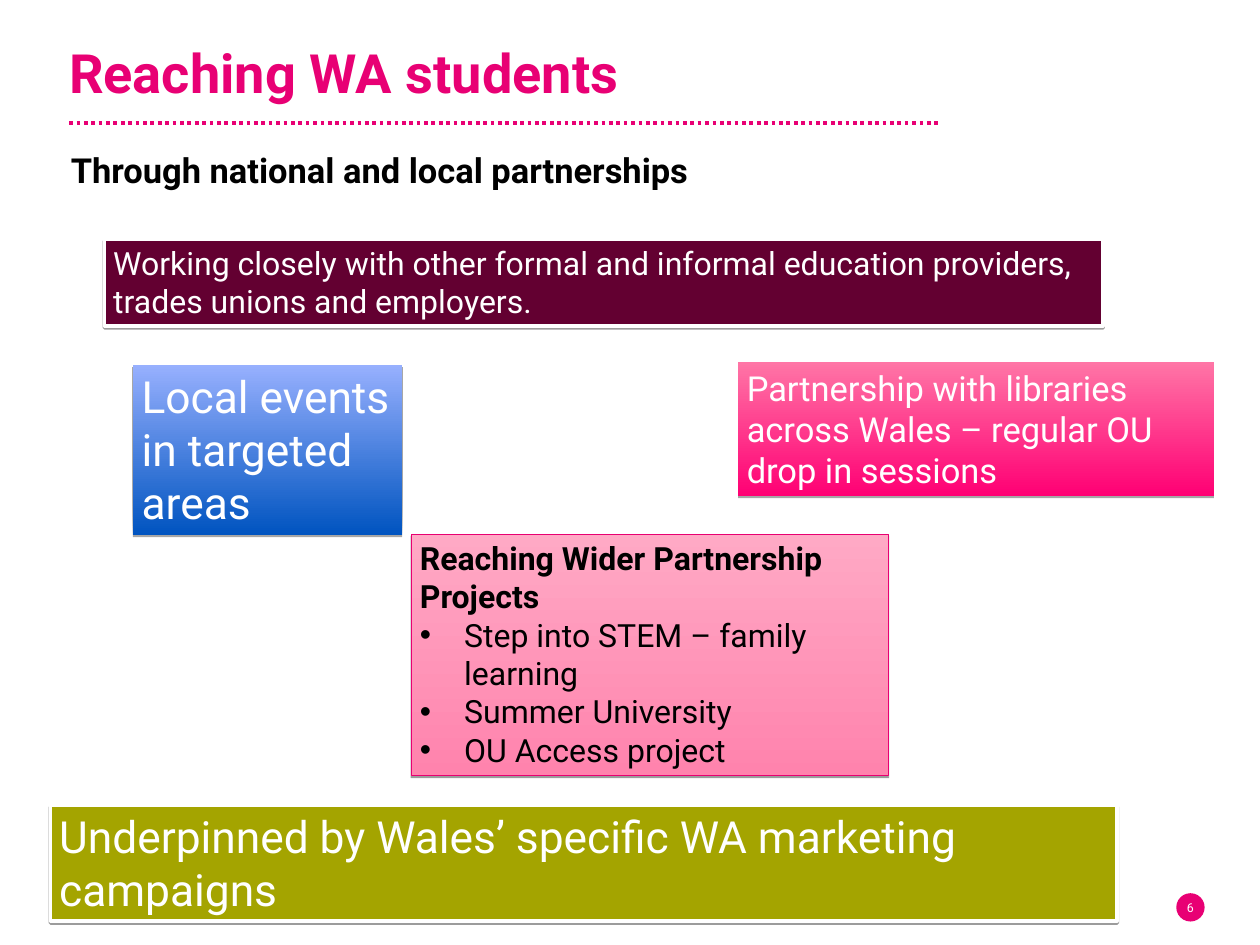
from lxml import etree
from pptx import Presentation
from pptx import util as u
from pptx.dml import color as col
from pptx.enum import dml, shapes, text
from pptx.oxml import ns

HUES = {
    "pink": "E80074", "white": "FFFFFF", "black": "000000",
    "plum": "630031", "olive": "A4A400", "edge": "E80071",
    "navy": "0054C0", "sky": "97B0FE", "hot": "FF0074",
    "rose": "FF75A6", "coral": "FF83AD", "blush": "FFA9C5",
}
FONT = "Roboto"


def hue(name):
    return col.RGBColor.from_string(HUES[name])


def inch(box):
    return [u.Inches(n) for n in box]


def place(item, box):
    item.left, item.top, item.width, item.height = inch(box)


def inset(frame, side, top):
    frame.margin_left = frame.margin_right = u.Inches(side)
    frame.margin_top = frame.margin_bottom = u.Inches(top)


def add(parent, tag, **attrs):
    return etree.SubElement(parent, ns.qn(tag), attrs)


def style(para, size, ink, bold=False, align=text.PP_ALIGN.LEFT):
    para.alignment = align
    for run in para.runs:
        font = run.font
        font.name, font.size, font.bold = FONT, u.Pt(size), bold
        font.color.rgb = hue(ink)


def bullet(para):
    props = para._p.get_or_add_pPr()
    props.set("marL", str(u.Inches(0.5)))
    props.set("indent", str(-u.Inches(0.5)))
    add(props, "a:buFont", typeface="Arial")
    add(props, "a:buChar", char="•")


def shade(shape, alpha, drop):
    shape.shadow.inherit = False
    effects = shape._element.spPr.find(ns.qn("a:effectLst"))
    outer = add(effects, "a:outerShdw", blurRad="0", dist=str(u.Pt(drop)),
                dir="5400000", rotWithShape="0")
    tint = add(outer, "a:srgbClr", val=HUES["black"])
    add(tint, "a:alpha", val=str(alpha * 1000))


def heading(holder, box, words, size, ink):
    place(holder, box)
    frame = holder.text_frame
    frame.text = words
    frame.word_wrap = True
    frame.auto_size = text.MSO_AUTO_SIZE.NONE
    frame.vertical_anchor = text.MSO_ANCHOR.TOP
    inset(frame, 0, 0)
    para = frame.paragraphs[0]
    para.space_before = u.Pt(0)
    para.line_spacing = 1.0
    style(para, size, ink, True)
    return para


def header(slide, box):
    left, top, width, _ = box
    title = heading(slide.shapes.title, (left, top, width, 0.9),
                    "Reaching WA students", 44, "pink")
    title.line_spacing = u.Pt(52)
    heading(slide.placeholders[1], (left + 0.02, top + 1.22, width, 0.47),
            "Through national and local partnerships", 28, "black")
    ends = inch((left, top + 0.93, left + 9.84, top + 0.93))
    rule = slide.shapes.add_connector(shapes.MSO_CONNECTOR.STRAIGHT, *ends)
    rule.line.color.rgb = hue("pink")
    rule.line.width = u.Pt(3)
    rule.line.dash_style = dml.MSO_LINE.ROUND_DOT
    add(rule._element.spPr, "a:effectLst")


def panel(slide, box, words, size, fills, edge=None, ink="white"):
    shape = slide.shapes.add_shape(shapes.MSO_SHAPE.RECTANGLE, *inch(box))
    if len(fills) == 1:
        shape.fill.solid()
        shape.fill.fore_color.rgb = hue(fills[0])
    else:
        shape.fill.gradient()
        shape.fill.gradient_angle = 90
        for stop, spot, name in zip(shape.fill.gradient_stops, (0, 1), fills):
            stop.position = spot
            stop.color.rgb = hue(name)
    if edge:
        name, width = edge
        shape.line.color.rgb = hue(name)
        shape.line.width = u.Pt(width)
        shade(shape, 38, 1.6)
    else:
        shape.line.fill.background()
        shade(shape, 35, 1.8)
    frame = shape.text_frame
    frame.text = words
    frame.word_wrap = True
    frame.auto_size = text.MSO_AUTO_SIZE.SHAPE_TO_FIT_TEXT
    frame.vertical_anchor = text.MSO_ANCHOR.TOP
    inset(frame, 0.1, 0.05)
    for para in frame.paragraphs:
        style(para, size, ink)
    return frame


def projects(slide, box):
    words = "\n".join(("Reaching Wider Partnership Projects",
                       "Step into STEM – family learning",
                       "Summer University", "OU Access project"))
    frame = panel(slide, box, words, 26, ("coral", "blush"),
                  ("edge", 0.75), "black")
    head, *items = frame.paragraphs
    style(head, 26, "black", True)
    for para in items:
        bullet(para)


def badge(slide, box):
    left, top, width, height = box
    size = 0.32
    spot = (left + (width - size) / 2, top + (height - size) / 2, size, size)
    disc = slide.shapes.add_shape(shapes.MSO_SHAPE.OVAL, *inch(spot))
    disc.shadow.inherit = False
    disc.fill.solid()
    disc.fill.fore_color.rgb = hue("pink")
    disc.line.fill.background()
    frame = slide.shapes.add_textbox(*inch(box)).text_frame
    frame.text = "6"
    frame.word_wrap = True
    frame.vertical_anchor = text.MSO_ANCHOR.MIDDLE
    inset(frame, 0.14, 0.07)
    style(frame.paragraphs[0], 10, "white", align=text.PP_ALIGN.CENTER)


def main():
    deck = Presentation()
    deck.slide_width, deck.slide_height = inch((14.22, 10.67))
    slide = deck.slides.add_slide(deck.slide_layouts[0])
    frame = ("white", 3)
    header(slide, (0.78, 0.46, 10.4, 1.69))
    badge(slide, (13.16, 9.96, 0.55, 0.57))
    panel(slide, (1.5, 4.12, 3.04, 1.92), "Local events in targeted areas",
          36, ("navy", "sky"))
    panel(slide, (0.57, 9.09, 12.04, 1.31),
          "Underpinned by Wales’ specific WA marketing campaigns",
          36, ("olive",), frame)
    projects(slide, (4.64, 6.03, 5.39, 2.73))
    panel(slide, (8.33, 4.09, 5.37, 1.51),
          "Partnership with libraries across Wales – regular OU drop in sessions",
          28, ("hot", "rose"))
    panel(slide, (1.18, 2.7, 11.27, 0.98),
          "Working closely with other formal and informal education providers, "
          "trades unions and employers.", 26, ("plum",), frame)
    deck.save("out.pptx")


if __name__ == "__main__":
    main()
